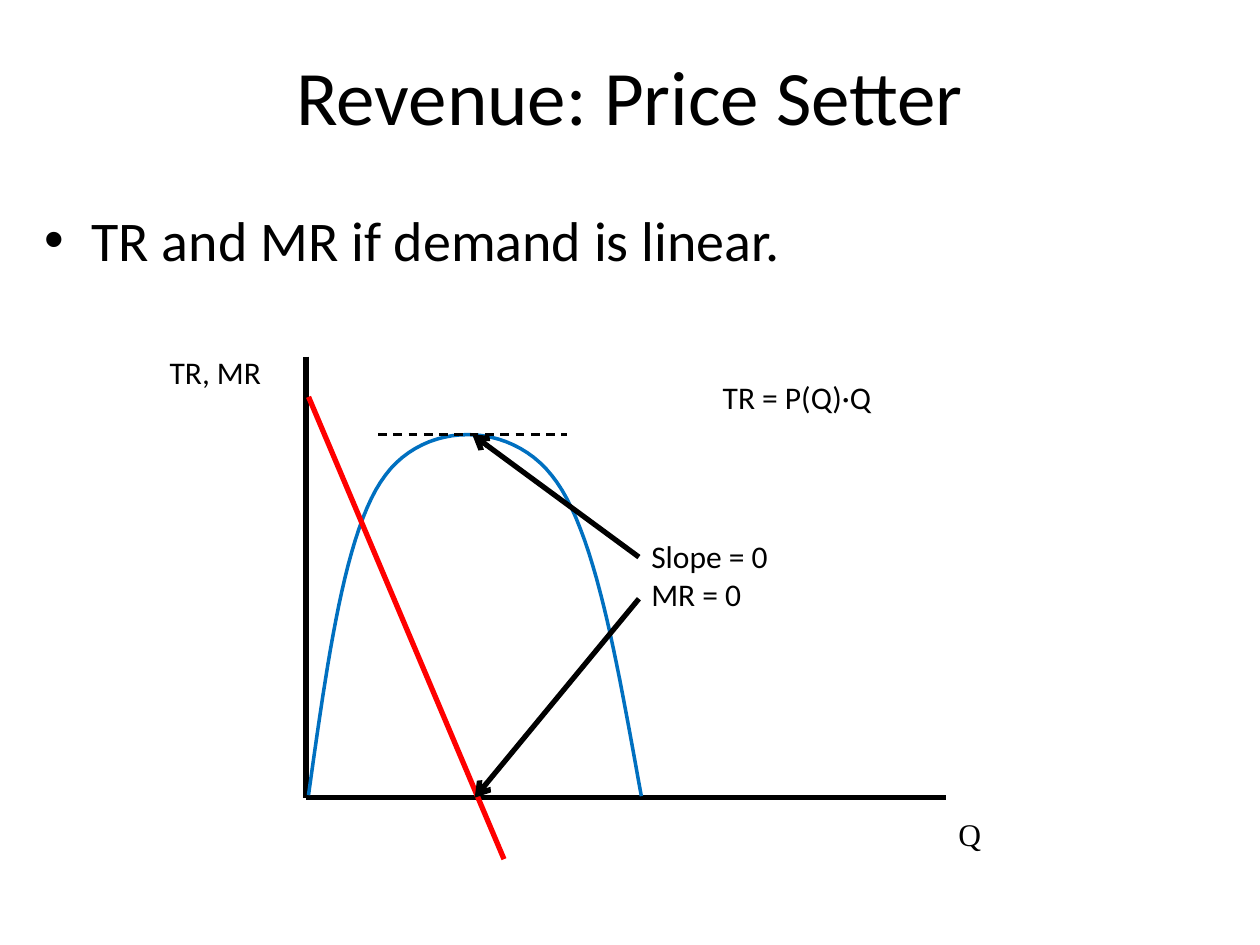
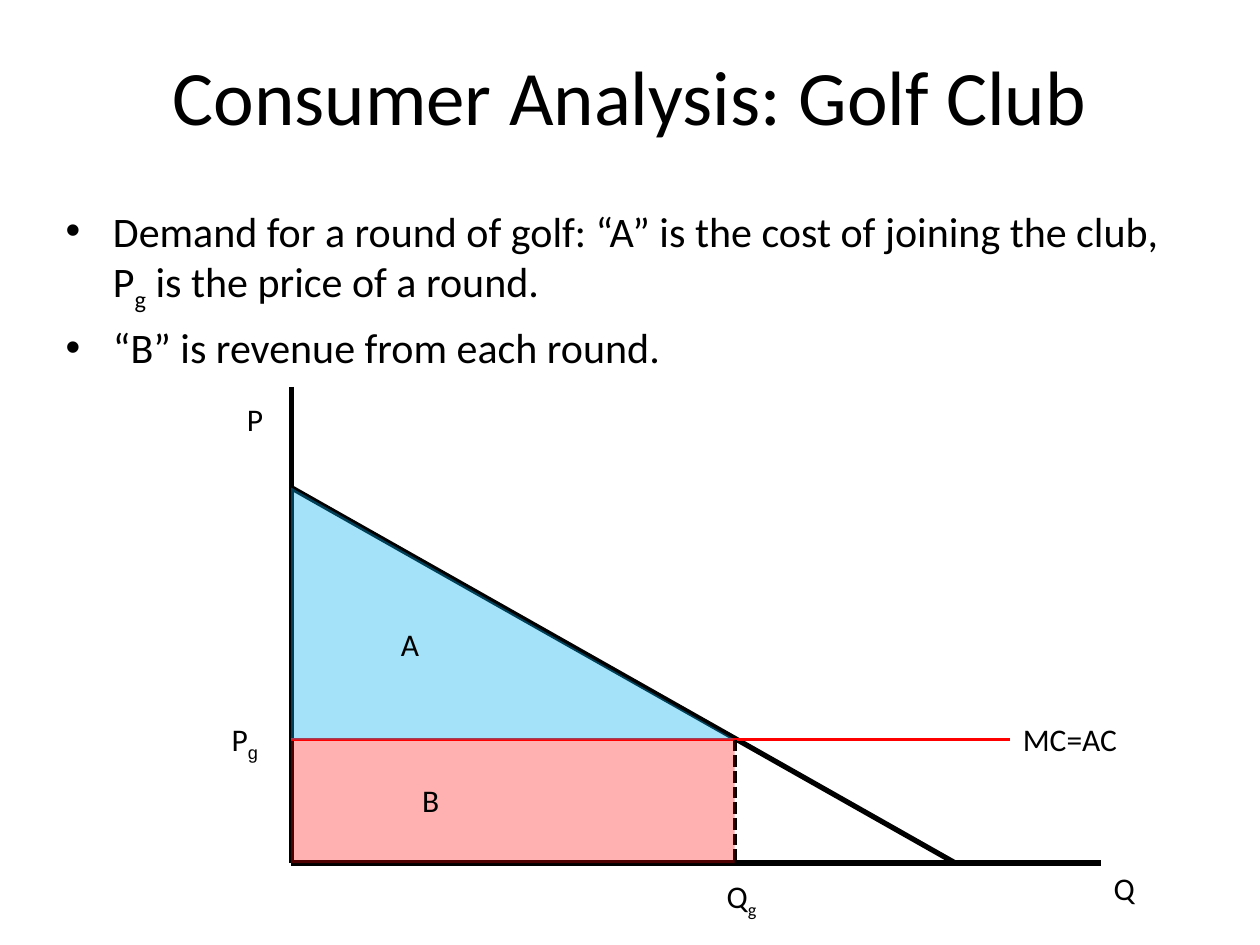
from dataclasses import dataclass

from lxml.etree import SubElement
from pptx import Presentation
from pptx.dml.color import RGBColor
from pptx.enum.dml import MSO_LINE
from pptx.enum.shapes import MSO_CONNECTOR, MSO_SHAPE
from pptx.enum.text import MSO_ANCHOR, MSO_AUTO_SIZE, PP_ALIGN
from pptx.oxml.ns import qn
from pptx.util import Cm, Pt


@dataclass(frozen=True)
class Theme:
    """Colours, fonts and sizes used on every slide."""
    ink: RGBColor = RGBColor(0x00, 0x00, 0x00)
    red: RGBColor = RGBColor(0xFF, 0x00, 0x00)
    curve: RGBColor = RGBColor(0x00, 0x70, 0xC0)
    surplus: RGBColor = RGBColor(0x00, 0xB0, 0xF0)
    font: str = "Calibri"
    serif: str = "Times New Roman"
    sans: str = "Arial"
    title_size: int = 44
    label_size: int = 18
    label_height: float = 1.02
    heavy: float = 3
    medium: float = 2


@dataclass(frozen=True)
class Box:
    """A region in centimetres whose diagram origin is its lower left corner."""
    left: float
    top: float
    width: float
    height: float

    def at(self, across, up):
        """Return the slide position of a point measured from the origin."""
        return Cm(self.left + across), Cm(self.top + self.height - up)


THEME = Theme()


def write_spans(para, pieces, size, font=THEME.font, sub_font=None):
    """Write pieces into a paragraph, every second one as a subscript."""
    for index, piece in enumerate(pieces):
        span = para.add_run()
        span.text = piece
        span.font.size = Pt(size)
        span.font.name = font
        span.font.color.rgb = THEME.ink
        if index % 2:
            span.font.name = sub_font or font
            span.font._element.set("baseline", "-25000")


def place(shape, box):
    """Move a placeholder into a box."""
    shape.left, shape.top = Cm(box.left), Cm(box.top)
    shape.width, shape.height = Cm(box.width), Cm(box.height)


def add_page(deck, title, title_box, bullets, body_box, size):
    """Add a slide with a centred title and a bulleted list."""
    page = deck.slides.add_slide(deck.slide_layouts[1])
    heading, body = page.shapes.title, page.placeholders[1]
    place(heading, title_box)
    heading.text_frame.vertical_anchor = MSO_ANCHOR.MIDDLE
    heading.text_frame.paragraphs[0].alignment = PP_ALIGN.CENTER
    write_spans(heading.text_frame.paragraphs[0], [title], THEME.title_size)
    place(body, body_box)
    for index, pieces in enumerate(bullets):
        frame = body.text_frame
        para = frame.add_paragraph() if index else frame.paragraphs[0]
        write_spans(para, pieces, size)
    return page


def add_label(page, box, left, top, width, *lines, font=THEME.font, sub_font=None):
    """Add an unwrapped label, one list of pieces for each line."""
    height = THEME.label_height + 0.78 * (len(lines) - 1)
    label = page.shapes.add_textbox(*box.at(left, top), Cm(width), Cm(height))
    frame = label.text_frame
    frame.word_wrap = False
    frame.auto_size = MSO_AUTO_SIZE.SHAPE_TO_FIT_TEXT
    for index, pieces in enumerate(lines):
        para = frame.add_paragraph() if index else frame.paragraphs[0]
        write_spans(para, pieces, THEME.label_size, font, sub_font)
    return label


def add_line(page, box, start, end, color=THEME.ink, width=THEME.heavy, dash=None, arrow=False):
    """Draw a straight line between two diagram points."""
    line = page.shapes.add_connector(MSO_CONNECTOR.STRAIGHT, *box.at(*start), *box.at(*end))
    line.line.color.rgb = color
    line.line.width = Pt(width)
    if dash:
        line.line.dash_style = dash
    properties = line._element.spPr
    if arrow:
        SubElement(properties.find(qn("a:ln")), qn("a:tailEnd"), type="arrow")
    SubElement(properties, qn("a:effectLst"))
    return line


def add_axes(page, box):
    """Draw both axes along the left and bottom of the box."""
    add_line(page, box, (0, box.height), (0, 0))
    add_line(page, box, (0, 0), (box.width, 0))


def bezier_point(controls, t):
    """Return the point at t on a cubic curve."""
    weights = ((1 - t) ** 3, 3 * t * (1 - t) ** 2, 3 * t ** 2 * (1 - t), t ** 3)
    return tuple(sum(w * point[axis] for w, point in zip(weights, controls)) for axis in (0, 1))


def add_curve(page, box, controls, color, steps=24):
    """Draw joined cubic curves as one open outline."""
    points = [
        box.at(*bezier_point(controls[first:first + 4], step / steps))
        for first in range(0, len(controls) - 1, 3)
        for step in range(1, steps + 1)
    ]
    builder = page.shapes.build_freeform(*box.at(*controls[0]))
    builder.add_line_segments(points, close=False)
    curve = builder.convert_to_shape()
    curve.shadow.inherit = False
    curve.fill.background()
    curve.line.color.rgb = color
    curve.line.width = Pt(THEME.medium)


def add_area(page, box, kind, top, width, height, color, opacity):
    """Fill a translucent area that starts at the vertical axis."""
    area = page.shapes.add_shape(kind, *box.at(0, top), Cm(width), Cm(height))
    area.shadow.inherit = False
    area.fill.solid()
    area.fill.fore_color.rgb = color
    area.line.fill.background()
    tint = area._element.spPr.find(".//" + qn("a:srgbClr"))
    SubElement(tint, qn("a:alpha"), val=str(opacity * 1000))


def draw_revenue(page, box):
    """Draw total and marginal revenue under linear demand."""
    peak, callout = 7.32, 6.71
    add_axes(page, box)
    add_label(page, box, -3, 9.09, 2.36, ["TR, MR"])
    add_label(page, box, box.width, -0.23, 0.97, ["Q"], font=THEME.serif)
    total_revenue = [
        (0.05, 0.05), (0.43, 2.74), (0.79, 5.44), (1.6, 6.5), (2.41, 7.59),
        (4.09, 7.59), (4.95, 6.5), (5.82, 5.44), (6.27, 2.72), (6.76, 0.03),
    ]
    add_curve(page, box, total_revenue, THEME.curve)
    add_line(page, box, (0.05, 8.08), (3.99, -1.24), THEME.red)
    add_line(page, box, (1.45, peak), (5.26, peak), width=1.25, dash=MSO_LINE.DASH)
    add_label(page, box, callout, 5.38, 2.9, ["Slope = 0"], ["MR = 0"])
    add_line(page, box, (callout, 4.85), (3.35, peak), arrow=True)
    add_line(page, box, (callout, 4.01), (3.4, 0), arrow=True)
    add_label(page, box, 8.15, 8.59, 3.53, ["TR = P(Q)·Q"])


def draw_golf_demand(page, box):
    """Draw golf demand with the joining fee and the revenue areas."""
    choke, price, rounds = 7.57, 2.49, 8.94
    price_label = price + THEME.label_height / 2
    add_axes(page, box)
    add_line(page, box, (0, choke), (13.39, 0))
    add_label(page, box, -1.14, 9.47, 0.84, ["P"])
    add_label(page, box, box.width, 0, 0.94, ["Q"])
    add_label(page, box, 8.53, -0.15, 1.17, ["Q", "g"])
    cost_label = add_label(page, box, 14.5, price_label, 2.44, ["MC=AC"])
    cost = add_line(page, box, (0, price), (14.5, price), THEME.red, THEME.medium)
    cost.end_connect(cost_label, 1)
    add_line(page, box, (rounds, price), (rounds, 0), width=2.25, dash=MSO_LINE.SQUARE_DOT)
    add_area(page, box, MSO_SHAPE.RIGHT_TRIANGLE, choke, rounds, choke - price, THEME.surplus, 36)
    add_label(page, box, 1.96, 4.93, 0.89, ["A"])
    add_label(page, box, -1.45, price_label, 1.09, ["P", "g"], sub_font=THEME.sans)
    add_area(page, box, MSO_SHAPE.RECTANGLE, price, rounds, price, THEME.red, 31)
    add_label(page, box, 2.39, 1.78, 0.86, ["B"])


def main():
    """Build and save both slides."""
    deck = Presentation()
    deck.slide_width, deck.slide_height = Cm(25.4), Cm(19.05)
    revenue = add_page(
        deck, "Revenue: Price Setter", Box(1.27, 0.43, 22.86, 2.97),
        [["TR and MR if demand is linear."]], Box(0.64, 4.01, 23.7, 14.4), 32,
    )
    draw_revenue(revenue, Box(6.17, 7.19, 12.9, 8.89))
    golf_bullets = [
        ["Demand for a round of golf: “A” is the cost of joining the club, P", "g",
         " is the price of a round."],
        ["“B” is revenue from each round."],
    ]
    golf = add_page(
        deck, "Consumer Analysis: Golf Club", Box(1.27, 0.64, 22.86, 2.54),
        golf_bullets, Box(1.07, 4.01, 23.06, 13), 24,
    )
    draw_golf_demand(golf, Box(5.87, 7.8, 16.33, 9.6))
    deck.save("out.pptx")


if __name__ == "__main__":
    main()
